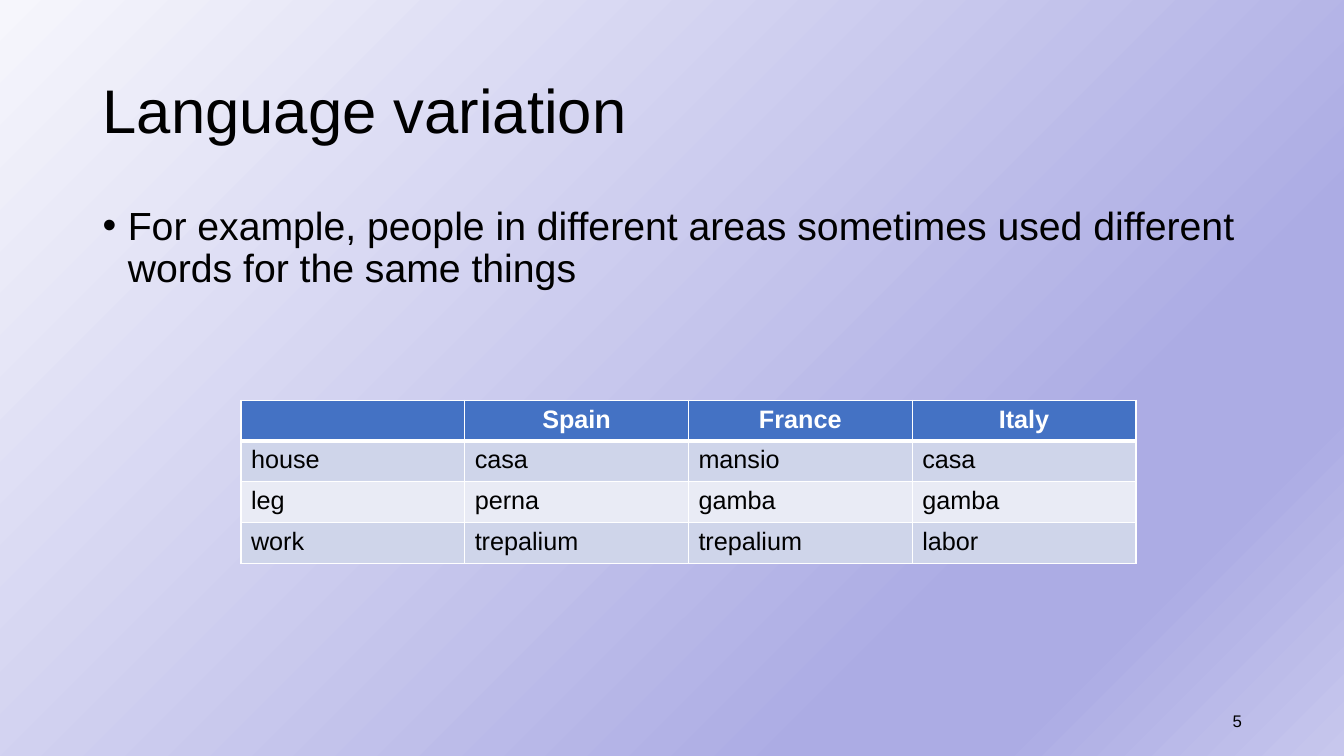
from lxml.etree import SubElement
from pptx import Presentation
from pptx.dml.color import RGBColor
from pptx.enum.text import MSO_ANCHOR as Anchor, PP_ALIGN as Align
from pptx.oxml.ns import qn
from pptx.util import Inches, Pt

BLACK = RGBColor(0x00, 0x00, 0x00)
WHITE = RGBColor(0xFF, 0xFF, 0xFF)
HEADER_BLUE = RGBColor(0x44, 0x72, 0xC4)
BAND_DARK = RGBColor(0xCF, 0xD5, 0xEA)
BAND_LIGHT = RGBColor(0xE9, 0xEB, 0xF5)
PALE = RGBColor(0xF6, 0xF6, 0xFC)
LAVENDER = RGBColor(0xAC, 0xAC, 0xE4)
LILAC = RGBColor(0xC7, 0xC7, 0xED)
GRADIENT_STOPS = [(0, PALE), (74, LAVENDER), (83, LAVENDER), (100, LILAC)]

MARGIN = 0.92
CONTENT_WIDTH = 11.5
COLUMN_WIDTH = Inches(2.22)
ROW_HEIGHT = Inches(0.405)
WORDS = [
    ["", "Spain", "France", "Italy"],
    ["house", "casa", "mansio", "casa"],
    ["leg", "perna", "gamba", "gamba"],
    ["work", "trepalium", "trepalium", "labor"],
]


def style_paragraph(paragraph, size, color=BLACK, bold=False):
    paragraph.font.name = "Arial"
    paragraph.font.size = Pt(size)
    paragraph.font.color.rgb = color
    paragraph.font.bold = bold


def add_text(left, top, width, height, text, size, anchor):
    box = slide.shapes.add_textbox(Inches(left), Inches(top), Inches(width), Inches(height))
    box.text_frame.word_wrap = True
    box.text_frame.vertical_anchor = anchor
    paragraph = box.text_frame.paragraphs[0]
    paragraph.text = text
    style_paragraph(paragraph, size)
    return paragraph


presentation = Presentation()
presentation.slide_width = Inches(13.333)
presentation.slide_height = Inches(7.5)
slide = presentation.slides.add_slide(presentation.slide_layouts[6])

background = slide.background.fill
background.gradient()
background.gradient_angle = 315
stop_list = slide.element.find(".//" + qn("a:gsLst"))
for stop in list(stop_list):
    stop_list.remove(stop)
for position, color in GRADIENT_STOPS:
    stop = SubElement(stop_list, qn("a:gs"), pos=str(position * 1000))
    SubElement(stop, qn("a:srgbClr"), val=str(color))

title = add_text(MARGIN, 0.4, CONTENT_WIDTH, 1.45, "Language variation", 44, Anchor.MIDDLE)
title.line_spacing = 0.9

bullet = add_text(
    MARGIN, 2, CONTENT_WIDTH, 0.98,
    "For example, people in different areas sometimes used different words for the same things",
    28, Anchor.TOP,
)
bullet.line_spacing = 0.9
bullet.space_before = Pt(10)
properties = bullet._p.get_or_add_pPr()
properties.set("marL", str(Inches(0.25)))
properties.set("indent", str(-Inches(0.25)))
SubElement(properties, qn("a:buFont"), typeface="Arial")
SubElement(properties, qn("a:buChar"), char="•")
properties.append(properties.find(qn("a:defRPr")))

page_number = add_text(9.42, 6.95, 3, 0.4, "5", 12, Anchor.MIDDLE)
page_number.alignment = Align.RIGHT

row_count, column_count = len(WORDS), len(WORDS[0])
table = slide.shapes.add_table(
    row_count, column_count, Inches(2.39), Inches(3.97),
    COLUMN_WIDTH * column_count, ROW_HEIGHT * row_count,
).table
for column in table.columns:
    column.width = COLUMN_WIDTH
for row_index, words in enumerate(WORDS):
    is_header = row_index == 0
    table.rows[row_index].height = ROW_HEIGHT
    for column_index, word in enumerate(words):
        cell = table.cell(row_index, column_index)
        paragraph = cell.text_frame.paragraphs[0]
        paragraph.text = word
        paragraph.alignment = Align.CENTER if is_header else Align.LEFT
        style_paragraph(paragraph, 18, WHITE if is_header else BLACK, is_header)
        thick_side = {0: "lnB", 1: "lnT"}.get(row_index)
        cell_properties = cell._tc.get_or_add_tcPr()
        for side in ("lnL", "lnR", "lnT", "lnB"):
            width = Pt(3) if side == thick_side else Pt(1)
            border = SubElement(cell_properties, qn(f"a:{side}"), w=str(width))
            border_fill = SubElement(border, qn("a:solidFill"))
            SubElement(border_fill, qn("a:srgbClr"), val=str(WHITE))
        cell.fill.solid()
        band = BAND_DARK if row_index % 2 else BAND_LIGHT
        cell.fill.fore_color.rgb = HEADER_BLUE if is_header else band

presentation.save("out.pptx")
